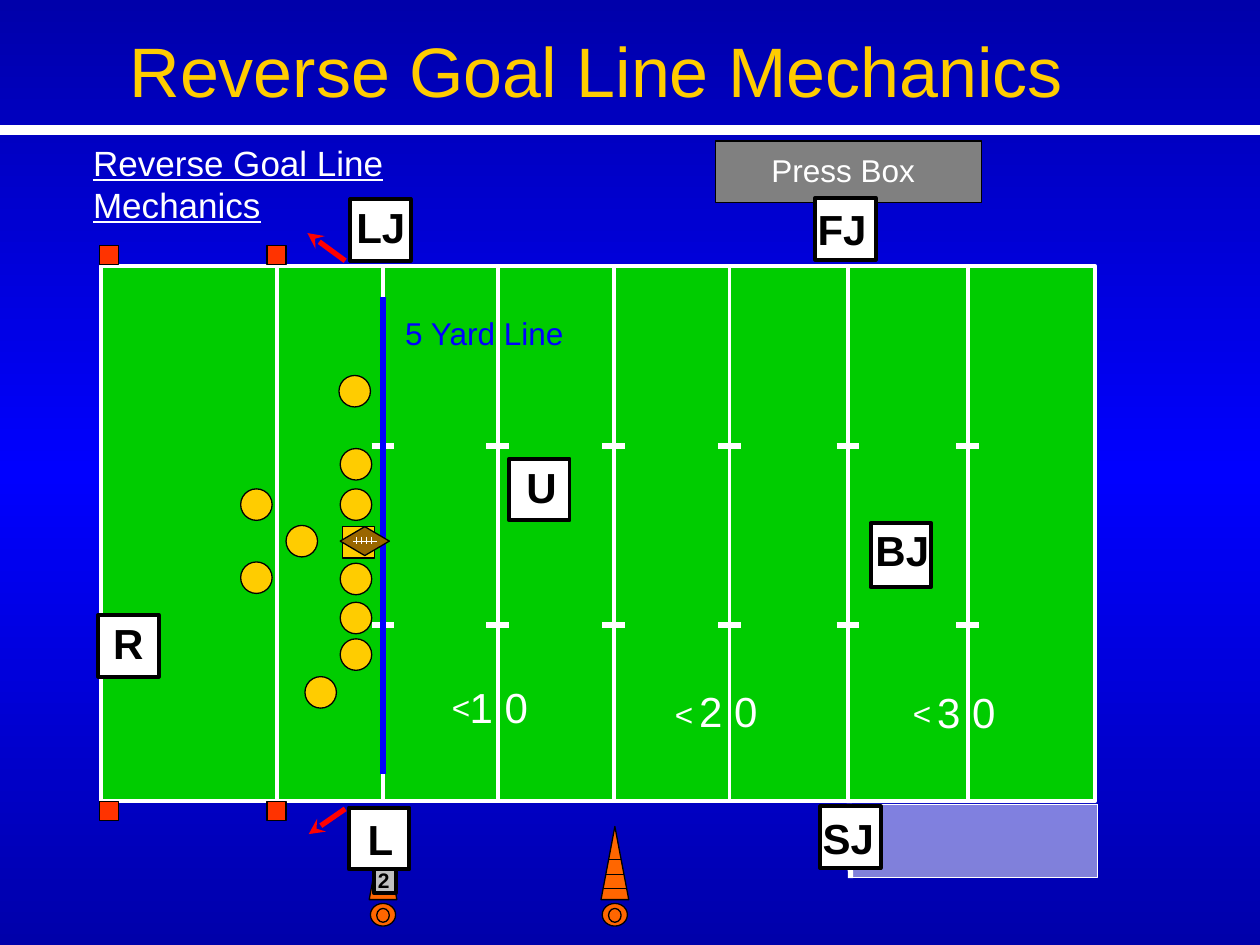
from copy import deepcopy

from lxml import etree
from pptx import Presentation
from pptx.dml.color import RGBColor
from pptx.enum import dml, shapes, text
from pptx.oxml.ns import qn
from pptx.util import Inches, Pt

WHITE = RGBColor(0xFF, 0xFF, 0xFF)
BLACK = RGBColor(0, 0, 0)
NAVY = RGBColor(0, 0, 0xAA)
BLUE = RGBColor(0, 0, 0xFF)
GOLD = RGBColor(0xFF, 0xCC, 0)
GREEN = RGBColor(0, 0xCC, 0)
GRAY = RGBColor(0x80, 0x80, 0x80)
SILVER = RGBColor(0xC0, 0xC0, 0xC0)
PYLON = RGBColor(0xFF, 0x33, 0)
ORANGE = RGBColor(0xFF, 0x66, 0)
BROWN = RGBColor(0x99, 0x66, 0)
RED = RGBColor(0xFF, 0, 0)

KIND = shapes.MSO_SHAPE
LEFT, RIGHT = text.PP_ALIGN.LEFT, text.PP_ALIGN.RIGHT


def add_box(parent, kind, x, y, w, h, fill=None, line=BLACK, width=0.75):
    sp = parent.add_shape(kind, Inches(x), Inches(y), Inches(w), Inches(h))
    sp.shadow.inherit = False
    if fill is None:
        sp.fill.background()
    else:
        sp.fill.solid()
        sp.fill.fore_color.rgb = fill
    sp.line.color.rgb = line
    sp.line.width = Pt(width)
    return sp


def add_line(parent, x1, y1, x2, y2, color=WHITE, width=2.25, arrow=False):
    cx = parent.add_connector(shapes.MSO_CONNECTOR.STRAIGHT,
                              Inches(x1), Inches(y1), Inches(x2), Inches(y2))
    cx.line.color.rgb = color
    cx.line.width = Pt(width)
    if arrow:
        etree.SubElement(cx.line._get_or_add_ln(), qn("a:tailEnd"), type="stealth")
    etree.SubElement(cx._element.spPr, qn("a:effectLst"))


def add_text(parent, words, x, y, w, h, size, color=WHITE, align=LEFT,
             bold=False, wrap=True):
    sp = parent.add_textbox(Inches(x), Inches(y), Inches(w), Inches(h))
    tf = sp.text_frame
    tf.word_wrap = wrap
    tf.text = words
    p = tf.paragraphs[0]
    p.alignment = align
    font = p.runs[0].font
    font.name, font.size, font.bold = "Arial", Pt(size), bold
    font.color.rgb = color
    return sp


def set_background(s):
    fill = s.background.fill
    fill.gradient()
    fill.gradient_angle = 270
    stops = s._element.find(".//" + qn("a:gsLst"))
    stops.insert(1, deepcopy(stops[0]))
    for stop, pos, color in zip(fill.gradient_stops, (0, 0.5, 1), (NAVY, BLUE, NAVY)):
        stop.position = pos
        stop.color.rgb = color


def add_header(s):
    add_line(s.shapes, 0, 1.03, 10, 1.03, width=6)
    add_text(s.shapes, "Reverse Goal Line Mechanics", 0.93, 0.17, 7.65, 0.77, 40, GOLD)
    subtitle = add_text(s.shapes, "Reverse Goal Line Mechanics", 0.64, 1.07, 3.91, 0.43, 20)
    subtitle.text_frame.margin_right = Inches(1.2)
    subtitle.text_frame.paragraphs[0].runs[0].font.underline = True


def add_press_box(s, x, y):
    add_box(s.shapes, KIND.RECTANGLE, x, y, 2.11, 0.49, GRAY)
    add_text(s.shapes, "Press Box", x + 0.34, y + 0.03, 1.34, 0.4, 18,
             align=RIGHT, wrap=False)


def add_field(s, x, y, w, h):
    bottom = y + h
    add_box(s.shapes, KIND.RECTANGLE, x, y, w, h, GREEN, WHITE, 2.25)
    # Goal line, then the yard lines with their hash marks
    add_line(s.shapes, x + 1.4, y, x + 1.4, bottom)
    for dx in (2.24, 3.15, 4.07, 4.99, 5.93, 6.88):
        add_line(s.shapes, x + dx, y, x + dx, bottom)
        for dy in (1.43, 2.85):
            add_line(s.shapes, x + dx - 0.09, y + dy, x + dx + 0.09, y + dy, width=3)
    # End zone pylons
    for dx in (-0.01, 1.32):
        for top in (y - 0.16, bottom):
            add_box(s.shapes, KIND.RECTANGLE, x + dx, top, 0.15, 0.15, PYLON)
    # Yard numbers with direction marks
    for number, dx, dy, mark_dx, mark_dy in (("1 0", 2.73, 3.25, 2.68, 3.3),
                                             ("2 0", 4.55, 3.28, 4.45, 3.36),
                                             ("3 0", 6.44, 3.29, 6.34, 3.35)):
        add_text(s.shapes, number, x + dx, y + dy, 0.76, 0.5, 24, align=RIGHT)
        add_text(s.shapes, "<", x + mark_dx, y + mark_dy, 0.35, 0.4, 18,
                 align=RIGHT, wrap=False)
    # Line of scrimmage
    add_line(s.shapes, x + 2.24, y + 0.25, x + 2.24, bottom - 0.22, BLUE, 3)
    add_text(s.shapes, "5 Yard Line", x + 2.29, y + 0.33, 1.48, 0.4, 18, BLUE,
             RIGHT, wrap=False)


def add_team_area(s, x, y):
    add_line(s.shapes, x - 0.01, y, x, y + 0.59, width=3)
    area = add_box(s.shapes, KIND.RECTANGLE, x, y, 1.96, 0.58, WHITE, WHITE, 0.25)
    area.line.dash_style = dml.MSO_LINE.ROUND_DOT
    color = area._element.spPr.find(qn("a:solidFill"))[0]
    etree.SubElement(color, qn("a:alpha"), val="50000")


def add_cone(s, center, y):
    cone = s.shapes.add_group_shape().shapes
    add_box(cone, KIND.ISOSCELES_TRIANGLE, center - 0.11, y, 0.22, 0.58, ORANGE)
    add_box(cone, KIND.OVAL, center - 0.1, y + 0.61, 0.2, 0.18, ORANGE)
    add_box(cone, KIND.OVAL, center - 0.05, y + 0.65, 0.1, 0.11)
    for half, dy in ((0.05, 0.26), (0.07, 0.38), (0.09, 0.49)):
        add_line(cone, center - half, y + dy, center + half, y + dy, BLACK, 0.75)


def add_offense(s):
    size = 0.25
    add_box(s.shapes, KIND.RECTANGLE, 2.72, 4.18, size, size, GOLD)
    line_men = [(2.7, y) for y in (3.56, 3.88, 4.47, 4.78, 5.07)]
    backs = [(1.91, 3.88), (1.91, 4.46), (2.27, 4.17)]
    ends = [(2.69, 2.98), (2.42, 5.37)]
    for x, y in line_men + backs + ends:
        add_box(s.shapes, KIND.OVAL, x, y, size, size, GOLD)


def add_ball(s, x, y):
    ball = s.shapes.add_group_shape().shapes
    add_box(ball, KIND.FLOWCHART_DECISION, x, y, 0.39, 0.23, BROWN)
    add_line(ball, x + 0.1, y + 0.12, x + 0.29, y + 0.12, width=0.75)
    for i in range(4):
        lace = x + 0.13 + 0.04 * i
        add_line(ball, lace, y + 0.08, lace, y + 0.14, width=0.75)


def add_down_marker(s, x, y):
    marker = s.shapes.add_group_shape().shapes
    add_box(marker, KIND.RECTANGLE, x, y, 0.17, 0.19, SILVER, width=2.25)
    add_text(marker, "2", x - 0.07, y - 0.06, 0.29, 0.3, 12, BLACK, bold=True)


def add_official(s, label, x, y, dx, dy, w, h=0.49):
    badge = s.shapes.add_group_shape().shapes
    add_box(badge, KIND.RECTANGLE, x, y, 0.48, h, WHITE, width=2.25)
    add_text(badge, label, x + dx, y + dy, w, 0.5, 24, BLACK, bold=True)


def main():
    prs = Presentation()
    prs.slide_width, prs.slide_height = Inches(10), Inches(7.5)
    s = prs.slides.add_slide(prs.slide_layouts[6])
    set_background(s)
    add_header(s)
    add_press_box(s, 5.68, 1.12)
    add_field(s, 0.8, 2.11, 7.89, 4.25)
    add_team_area(s, 6.75, 6.38)
    for center in (3.04, 4.88):
        add_cone(s, center, 6.56)
    add_offense(s)
    add_ball(s, 2.7, 4.18)
    add_down_marker(s, 2.97, 6.9)

    # Movement of the two wing officials
    add_line(s.shapes, 2.74, 2.07, 2.44, 1.85, RED, 3, arrow=True)
    add_line(s.shapes, 2.74, 6.42, 2.45, 6.62, RED, 3, arrow=True)

    # Officials: label, badge corner, label offset and label width
    add_official(s, "U", 4.04, 3.64, 0.04, -0.03, 0.34)
    add_official(s, "BJ", 6.91, 4.15, -0.06, -0.04, 0.66, h=0.51)
    add_official(s, "FJ", 6.47, 1.57, -0.08, 0, 0.67)
    add_official(s, "SJ", 6.51, 6.4, -0.08, 0, 0.67)
    add_official(s, "R", 0.78, 4.88, 0.02, -0.03, 0.34)
    add_official(s, "L", 2.77, 6.41, 0.05, 0, 0.5)
    add_official(s, "LJ", 2.78, 1.58, -0.05, -0.03, 0.76)
    prs.save("out.pptx")


if __name__ == "__main__":
    main()
